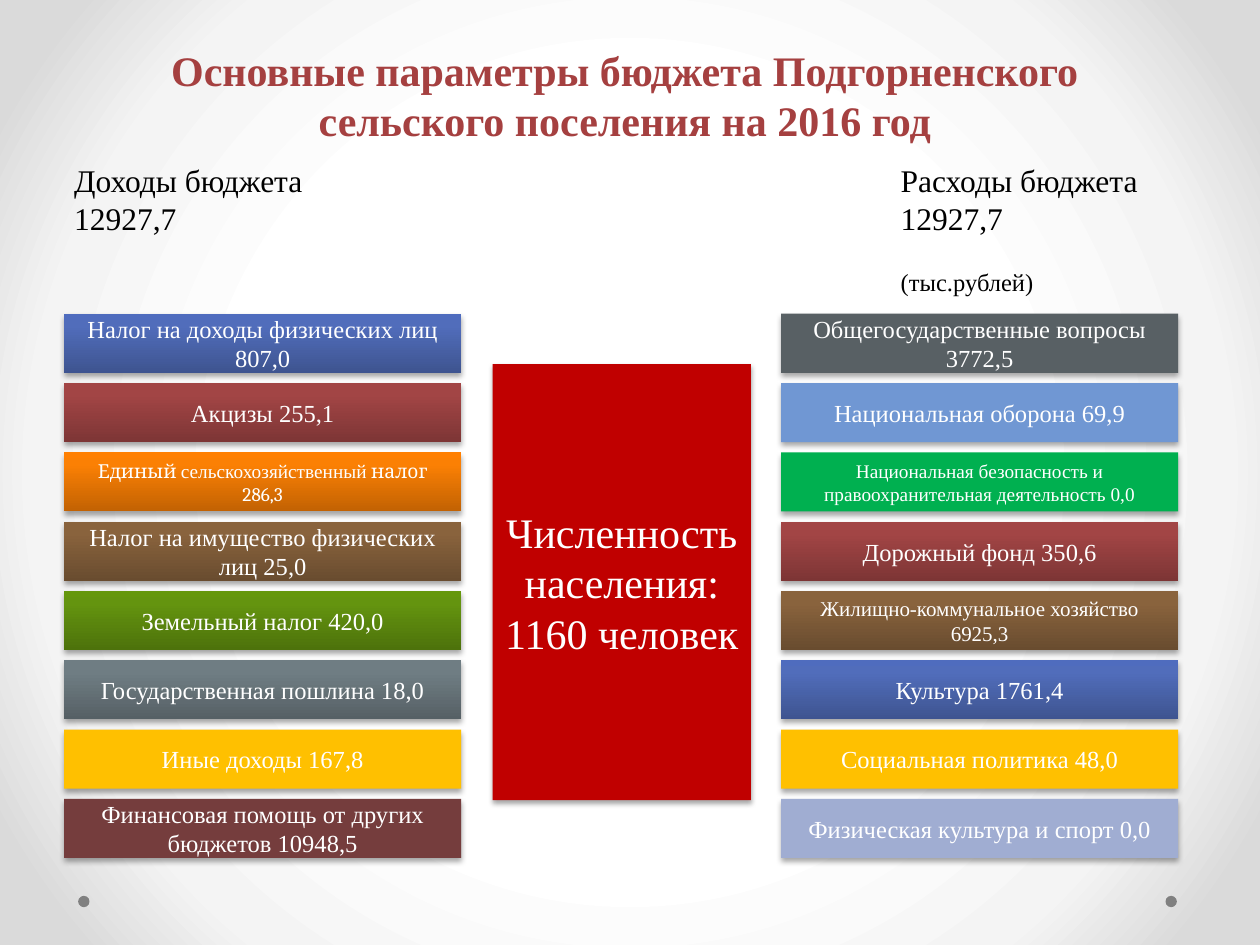
from dataclasses import dataclass
from typing import Optional

from lxml import etree
from pptx import Presentation
from pptx.dml.color import RGBColor as RGB
from pptx.enum.shapes import MSO_SHAPE as Shape
from pptx.enum.text import MSO_ANCHOR as Anchor, PP_ALIGN as Align
from pptx.oxml import parse_xml
from pptx.oxml.ns import nsdecls, qn
from pptx.util import Inches, Pt

W, H = 10, 7.5
FONT = "Times New Roman"
TOP, PITCH, BAR_W, BAR_H = 2.49, 0.55, 3.15, 0.47
COLUMNS = {"income": 0.51, "spending": 6.2}
COLORS = {
    "white": "FFFFFF", "black": "000000", "title": "A54040", "dot": "808080",
    "red": "C00000", "maroon": "753D3D", "yellow": "FFC000", "slate": "586064",
    "sky": "7097D3", "green": "00B050", "lavender": "A0ADD2",
}
GRADIENTS = {
    "blue": ("3E5490", "516DBB", "4F6CBE"),
    "brick": ("7D3535", "A24545", "A44343"),
    "orange": ("C26203", "FB8004", "FF8002"),
    "brown": ("694C2F", "89633D", "8B633C"),
    "grey": ("566065", "6F7D83", "6F7E84"),
    "grass": ("4D720B", "64940F", "65970C"),
}
BACKGROUND = ((50, "FFFFFF"), (76, "F4F4F4"), (92, "DADADA"))


@dataclass
class Run:
    text: str
    size: float = 14
    font: str = FONT
    color: str = "white"
    bold: bool = False


@dataclass
class Bar:
    column: str
    row: int
    fill: str
    runs: list[Run]


@dataclass
class Label:
    box: tuple[float, float, float, float]
    lines: list[Run]
    align: Optional[Align] = None
    last_gap: float = 0


INCOME = [
    ("blue", [Run("Налог на доходы физических лиц 807,0")]),
    ("brick", [Run("Акцизы 255,1")]),
    ("orange", [Run("Единый ", 11, "Cambria"), Run("сельскохозяйственный", 11),
                Run(" налог 286,3", 11, "Cambria")]),
    ("brown", [Run("Налог на имущество физических лиц 25,0")]),
    ("grass", [Run("Земельный налог 420,0")]),
    ("grey", [Run("Государственная пошлина 18,0")]),
    ("yellow", [Run("Иные доходы 167,8")]),
    ("maroon", [Run("Финансовая помощь от других бюджетов 10948,5")]),
]
SPENDING = [
    ("slate", [Run("Общегосударственные вопросы 3772,5")]),
    ("sky", [Run("Национальная оборона 69,9")]),
    ("green", [Run("Национальная безопасность и правоохранительная деятельность 0,0", 11)]),
    ("brick", [Run("Дорожный фонд 350,6")]),
    ("brown", [Run("Жилищно-коммунальное хозяйство 6925,3", 12)]),
    ("blue", [Run("Культура 1761,4")]),
    ("yellow", [Run("Социальная политика 48,0")]),
    ("lavender", [Run("Физическая культура и спорт 0,0")]),
]
BARS = [Bar(column, row, fill, runs)
        for column, items in (("income", INCOME), ("spending", SPENDING))
        for row, (fill, runs) in enumerate(items)]
LABELS = [
    Label((0.49, 1.23, 2.05, 0.71),
          [Run("Доходы бюджета", 18, color="black"), Run("12927,7", 18, color="black")]),
    Label((7.05, 1.23, 2.28, 1.18),
          [Run("Расходы бюджета", 18, color="black"), Run("12927,7", 18, color="black"),
           Run("(тыс.рублей)", color="black")], last_gap=17),
    Label((0.51, 0.3, 8.9, 0.91),
          [Run("Основные параметры бюджета Подгорненского сельского поселения на 2016 год",
               24, color="title", bold=True)], Align.CENTER),
]


def gradient(stops, direction: str):
    gs = "".join(f'<a:gs pos="{pos * 1000}"><a:srgbClr val="{color}"/></a:gs>'
                 for pos, color in stops)
    return parse_xml(f'<a:gradFill {nsdecls("a")} rotWithShape="1">'
                     f'<a:gsLst>{gs}</a:gsLst>{direction}</a:gradFill>')


def replace_solid(parent, grad) -> None:
    parent.replace(parent.find(qn("a:solidFill")), grad)


def add_shadow(sp) -> None:
    sp.shadow.inherit = False
    effects = sp._element.spPr.find(qn("a:effectLst"))
    outer = etree.SubElement(effects, qn("a:outerShdw"), blurRad=str(Pt(3.1)),
                             dist=str(Pt(1.8)), dir="5400000", rotWithShape="0")
    color = etree.SubElement(outer, qn("a:srgbClr"), val=COLORS["black"])
    etree.SubElement(color, qn("a:alpha"), val="35000")


def add_run(p, run: Run) -> None:
    r = p.add_run()
    r.text = run.text
    r.font.name, r.font.size, r.font.bold = run.font, Pt(run.size), run.bold
    r.font.color.rgb = RGB.from_string(COLORS[run.color])


def fill_text(tf, paragraphs: list[list[Run]], align: Optional[Align]) -> None:
    tf.word_wrap = True
    for i, runs in enumerate(paragraphs):
        p = tf.add_paragraph() if i else tf.paragraphs[0]
        p.alignment = align
        for run in runs:
            add_run(p, run)


def add_block(s, kind: Shape, box: tuple, fill: str):
    sp = s.shapes.add_shape(kind, *map(Inches, box))
    sp.shadow.inherit = False
    sp.line.fill.background()
    sp.fill.solid()
    if fill in GRADIENTS:
        replace_solid(sp._element.spPr, gradient(
            zip((0, 80, 100), GRADIENTS[fill]), '<a:lin ang="16200000" scaled="0"/>'))
    else:
        sp.fill.fore_color.rgb = RGB.from_string(COLORS[fill])
    return sp


def add_panel(s, box: tuple, fill: str, paragraphs: list[list[Run]]) -> None:
    sp = add_block(s, Shape.RECTANGLE, box, fill)
    add_shadow(sp)
    sp.text_frame.vertical_anchor = Anchor.MIDDLE
    fill_text(sp.text_frame, paragraphs, Align.CENTER)


def add_label(s, label: Label) -> None:
    tf = s.shapes.add_textbox(*map(Inches, label.box)).text_frame
    fill_text(tf, [[line] for line in label.lines], label.align)
    if label.last_gap:
        tf.paragraphs[-1].space_before = Pt(label.last_gap)


def main() -> None:
    prs = Presentation()
    prs.slide_width, prs.slide_height = Inches(W), Inches(H)
    s = prs.slides.add_slide(prs.slide_layouts[6])
    s.background.fill.solid()
    replace_solid(s._element.cSld.find(qn("p:bg")).find(qn("p:bgPr")), gradient(
        BACKGROUND, '<a:path path="circle"><a:fillToRect l="50000" t="50000" '
                    'r="50000" b="50000"/></a:path>'))
    for left in (9.25, 0.62):
        add_block(s, Shape.OVAL, (left, 7.11, 0.09, 0.09), "dot")
    for bar in BARS:
        box = (COLUMNS[bar.column], TOP + bar.row * PITCH, BAR_W, BAR_H)
        add_panel(s, box, bar.fill, [bar.runs])
    add_panel(s, (3.91, 2.89, 2.05, 3.46), "red",
              [[Run("Численность населения:", 24)], [Run("1160 человек", 24)]])
    for label in LABELS:
        add_label(s, label)
    prs.save("out.pptx")


if __name__ == "__main__":
    main()
